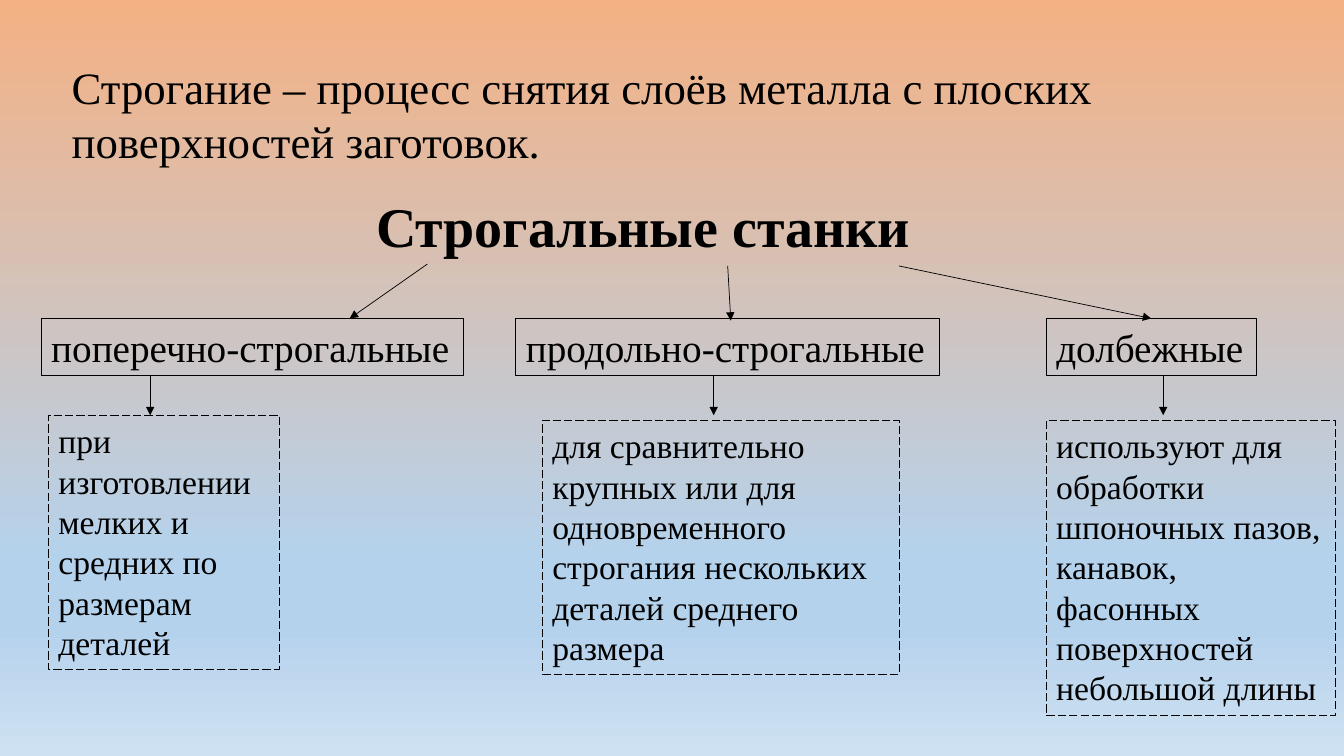
from lxml import etree
from pptx import Presentation
from pptx.dml.color import RGBColor
from pptx.enum.dml import MSO_LINE
from pptx.enum.shapes import MSO_CONNECTOR as CONN, MSO_SHAPE as SHAPE
from pptx.enum.text import MSO_ANCHOR as ANCHOR, MSO_AUTO_SIZE as AUTO, PP_ALIGN as ALIGN
from pptx.oxml.ns import qn
from pptx.util import Pt

FONT = "Times New Roman"
COLORS = {"ink": "000000", "peach": "F4B183", "sky": "B5D2EC", "pale": "CEE1F2"}
BACKGROUND = [(0, "peach"), (74, "sky"), (83, "sky"), (100, "pale")]
DEFINITION = "Строгание – процесс снятия слоёв металла с плоских поверхностей заготовок."
MACHINES = [
    {"name": "поперечно-строгальные", "box": (29.5, 227.5, 301.7, 41),
     "use": "при изготовлении мелких и средних по размерам деталей",
     "use_box": (34.6, 296.6, 164.9, 181.4),
     "from": (305.3, 188.6), "to": (249.8, 227.5), "down_x": 107.3},
    {"name": "продольно-строгальные", "box": (368.6, 227.5, 302.4, 41),
     "use": "для сравнительно крупных или для одновременного строгания "
            "нескольких деталей среднего размера",
     "use_box": (387.4, 300.2, 254.9, 181.4),
     "from": (519.8, 190), "to": (522, 229), "down_x": 509.8},
    {"name": "долбежные", "box": (747.4, 227.5, 149.8, 41),
     "use": "используют для обработки шпоночных пазов, канавок, "
            "фасонных поверхностей небольшой длины",
     "use_box": (747.4, 300.2, 206.6, 211),
     "from": (642.2, 190), "to": None, "down_x": 830.9},
]


def color(name):
    """Return the named colour."""
    return RGBColor.from_string(COLORS[name])


def paint_background(s):
    """Fill the slide with a vertical gradient."""
    fill = s.background.fill
    fill.gradient()
    fill.gradient_angle = 270
    stops = s._element.find(".//" + qn("a:gsLst"))
    for stop in list(stops):
        stops.remove(stop)
    for percent, name in BACKGROUND:
        stop = etree.SubElement(stops, qn("a:gs"), pos=str(percent * 1000))
        etree.SubElement(stop, qn("a:srgbClr"), val=COLORS[name])


def write(sp, text, size=24, bold=False):
    """Put left-aligned text at the top of a shape."""
    tf = sp.text_frame
    tf.word_wrap = True
    tf.auto_size = AUTO.NONE
    tf.vertical_anchor = ANCHOR.TOP
    p = tf.paragraphs[0]
    p.alignment = ALIGN.LEFT
    r = p.add_run()
    r.text = text
    r.font.name = FONT
    r.font.size = Pt(size)
    r.font.bold = bold
    r.font.color.rgb = color("ink")


def place(sp, left, top, width, height):
    """Move and size a shape."""
    sp.left, sp.top, sp.width, sp.height = map(Pt, (left, top, width, height))


def add_box(s, text, box, size, dash=None):
    """Add an outlined rectangle with text."""
    sp = s.shapes.add_shape(SHAPE.RECTANGLE, *map(Pt, box))
    sp.shadow.inherit = False
    sp.fill.background()
    sp.line.color.rgb = color("ink")
    sp.line.width = Pt(0.75)
    if dash:
        sp.line.dash_style = dash
    write(sp, text, size=size)
    return sp


def add_arrow(s, start, end, target=None):
    """Add an arrow, joined to the top of a target if there is one."""
    c = s.shapes.add_connector(CONN.STRAIGHT, *map(Pt, start + end))
    c.line.color.rgb = color("ink")
    c.line.width = Pt(0.5)
    etree.SubElement(c.line._get_or_add_ln(), qn("a:tailEnd"), type="triangle")
    etree.SubElement(c._element.spPr, qn("a:effectLst"))
    if target is not None:
        c.end_connect(target, 0)


def add_machine(s, machine):
    """Add one kind of machine with its use and arrows."""
    box = add_box(s, machine["name"], machine["box"], 28)
    add_box(s, machine["use"], machine["use_box"], 24, dash=MSO_LINE.LONG_DASH)
    if machine["to"]:
        add_arrow(s, machine["from"], machine["to"])
    else:
        add_arrow(s, machine["from"], machine["box"][:2], target=box)
    x = machine["down_x"]
    add_arrow(s, (x, 268.5), (x, 296.6))


def main():
    """Build the slide and save it."""
    prs = Presentation()
    prs.slide_width, prs.slide_height = Pt(960), Pt(540)
    s = prs.slides.add_slide(prs.slide_layouts[1])
    paint_background(s)
    title, body = s.placeholders
    place(body, 44, 39, 901.4, 85)
    write(body, DEFINITION, size=32)
    pPr = body.text_frame.paragraphs[0]._p.get_or_add_pPr()
    pPr.set("marL", "0")
    pPr.set("indent", "0")
    etree.SubElement(pPr, qn("a:buNone"))
    body.text_frame.paragraphs[0].space_before = Pt(0)
    place(title, 261.4, 133.2, 410.4, 55.4)
    write(title, "Строгальные станки", size=40, bold=True)
    for machine in MACHINES:
        add_machine(s, machine)
    prs.save("out.pptx")


if __name__ == "__main__":
    main()
